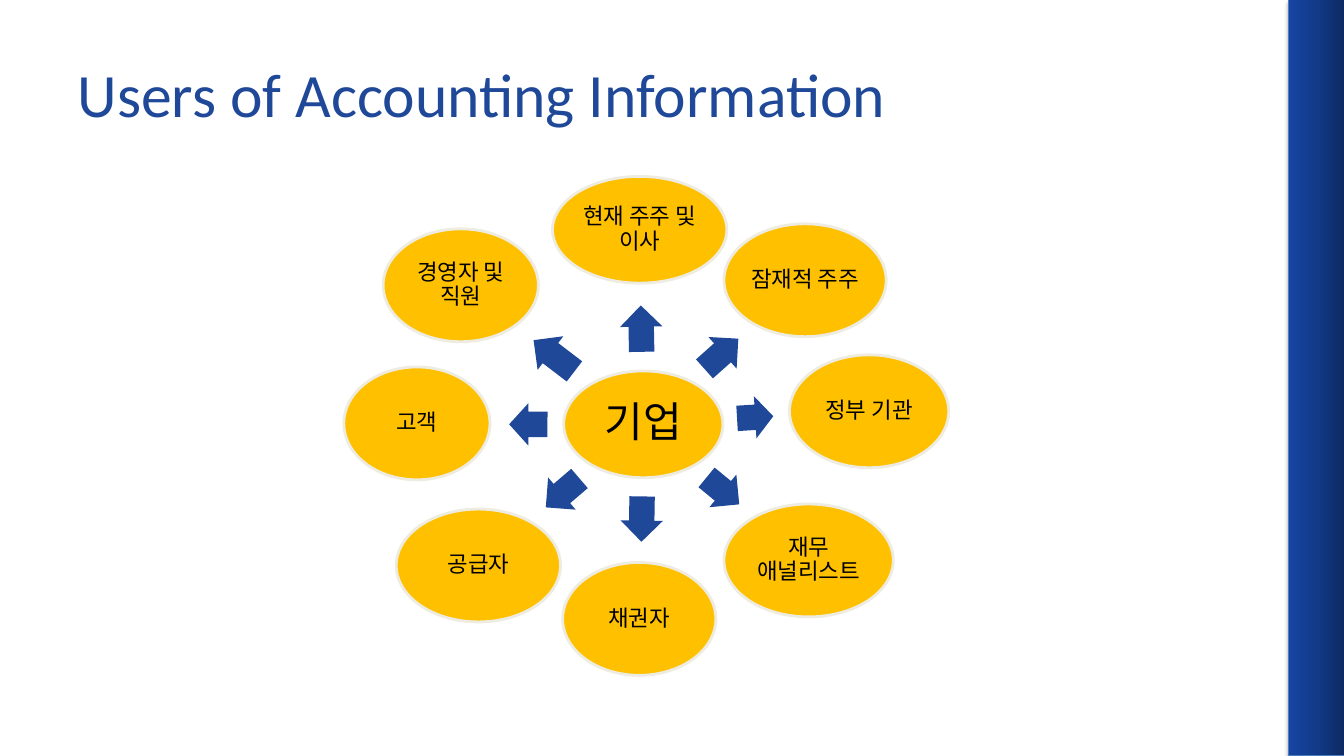
import copy

import pptx
import pptx.dml.color
import pptx.enum.shapes
import pptx.enum.text
import pptx.util
from lxml import etree
from pptx.oxml.ns import qn

PX = 9144  # 100 px to the inch
SHAPE = pptx.enum.shapes.MSO_SHAPE
ALIGN = pptx.enum.text.PP_ALIGN
MIDDLE = pptx.enum.text.MSO_ANCHOR.MIDDLE
BLUE, GOLD, CREAM, BLACK = "1F4899", "FFC000", "EEECE1", "000000"

# Each user: label, ellipse box, arrow box, arrow rotation
USERS = [
    ("현재 주주 및 이사", (548, 175, 173, 106), (613, 305, 46, 42), 268.9),
    ("잠재적 주주", (718, 222, 161, 112), (693, 330, 45, 42), 318.3),
    ("정부 기관", (783, 352, 158, 112), (731, 393, 36, 42), 356.6),
    ("재무 애널리스트", (718, 500, 168, 112), (696, 466, 42, 42), 39.5),
    ("채권자", (558, 558, 152, 112), (614, 494, 45, 42), 90.9),
    ("공급자", (393, 505, 163, 112), (536, 468, 44, 42), 139.4),
    ("고객", (341, 364, 145, 112), (505, 400, 38, 42), 180.2),
    ("경영자 및 직원", (380, 227, 154, 112), (524, 332, 51, 42), 217.4),
]


def rgb(value):
    return pptx.dml.color.RGBColor.from_string(value)


def set_attrs(obj, values):
    for name, value in values.items():
        setattr(obj, name, value)


def add_shape(s, kind, box, fill=None, line=None, width=0):
    sp = s.shapes.add_shape(kind, *(v * PX for v in box))
    sp.shadow.inherit = False
    if fill:
        sp.fill.solid()
        sp.fill.fore_color.rgb = rgb(fill)
    if line:
        sp.line.color.rgb = rgb(line)
        sp.line.width = pptx.util.Pt(width)
    else:
        sp.line.fill.background()
    return sp


def write_text(sp, text, size, color, align, frame, spacing=None):
    tf = sp.text_frame
    set_attrs(tf, {"word_wrap": True, "vertical_anchor": MIDDLE,
                   "auto_size": pptx.enum.text.MSO_AUTO_SIZE.NONE, **frame})
    p = tf.paragraphs[0]
    set_attrs(p, {"alignment": align, "line_spacing": spacing})
    r = p.add_run()
    r.text = text
    set_attrs(r.font, {"name": "Calibri", "size": pptx.util.Pt(size)})
    r.font.color.rgb = rgb(color)


def add_title(s, text):
    sp = s.shapes.title
    box = (67, 30, 1200, 125)
    set_attrs(sp, dict(zip(("left", "top", "width", "height"), (v * PX for v in box))))
    write_text(sp, text, 44, BLUE, ALIGN.LEFT, {})


def add_side_bar(s):
    sp = add_shape(s, SHAPE.RECTANGLE, (1278, 0, 56, 750), line="4B7EBC", width=0.75)
    sp.fill.gradient()
    sp.fill.gradient_angle = 180
    # The default gradient has two stops; a third goes between them
    stops = sp._element.spPr.find(".//" + qn("a:gsLst"))
    stops.insert(1, copy.deepcopy(stops[0]))
    colors = ("0D2960", "123A89", "1645A2")
    for stop, position, color in zip(sp.fill.gradient_stops, (0, 0.5, 1), colors):
        stop.position = position
        stop.color.rgb = rgb(color)
    # Soft shadow below the bar
    effects = sp._element.spPr.find(qn("a:effectLst"))
    shadow = etree.SubElement(effects, qn("a:outerShdw"), blurRad="39370",
                              dist="22860", dir="5400000", rotWithShape="0")
    color = etree.SubElement(shadow, qn("a:srgbClr"), val=BLACK)
    etree.SubElement(color, qn("a:alpha"), val="35000")


def add_ellipse(s, text, box, size, inset):
    sp = add_shape(s, SHAPE.OVAL, box, GOLD, CREAM, 2)
    sides = ("margin_left", "margin_top", "margin_right", "margin_bottom")
    write_text(sp, text, size, BLACK, ALIGN.CENTER, dict.fromkeys(sides, inset * PX), 0.9)


def add_arrow(s, box, rotation):
    sp = add_shape(s, SHAPE.RIGHT_ARROW, box, BLUE)
    sp.rotation = rotation
    sp.adjustments[0] = 0.6
    sp.adjustments[1] = 0.5


def main():
    prs = pptx.Presentation()
    set_attrs(prs, {"slide_width": 1333 * PX, "slide_height": 750 * PX})
    s = prs.slides.add_slide(prs.slide_layouts[5])

    # Frame
    add_side_bar(s)
    add_title(s, "Users of Accounting Information")

    # Company at the centre, users around it
    add_ellipse(s, "기업", (559, 368, 158, 106), 30, 4)
    for text, box, arrow_box, rotation in USERS:
        add_arrow(s, arrow_box, rotation)
        add_ellipse(s, text, box, 16, 2)

    prs.save("out.pptx")


if __name__ == "__main__":
    main()
